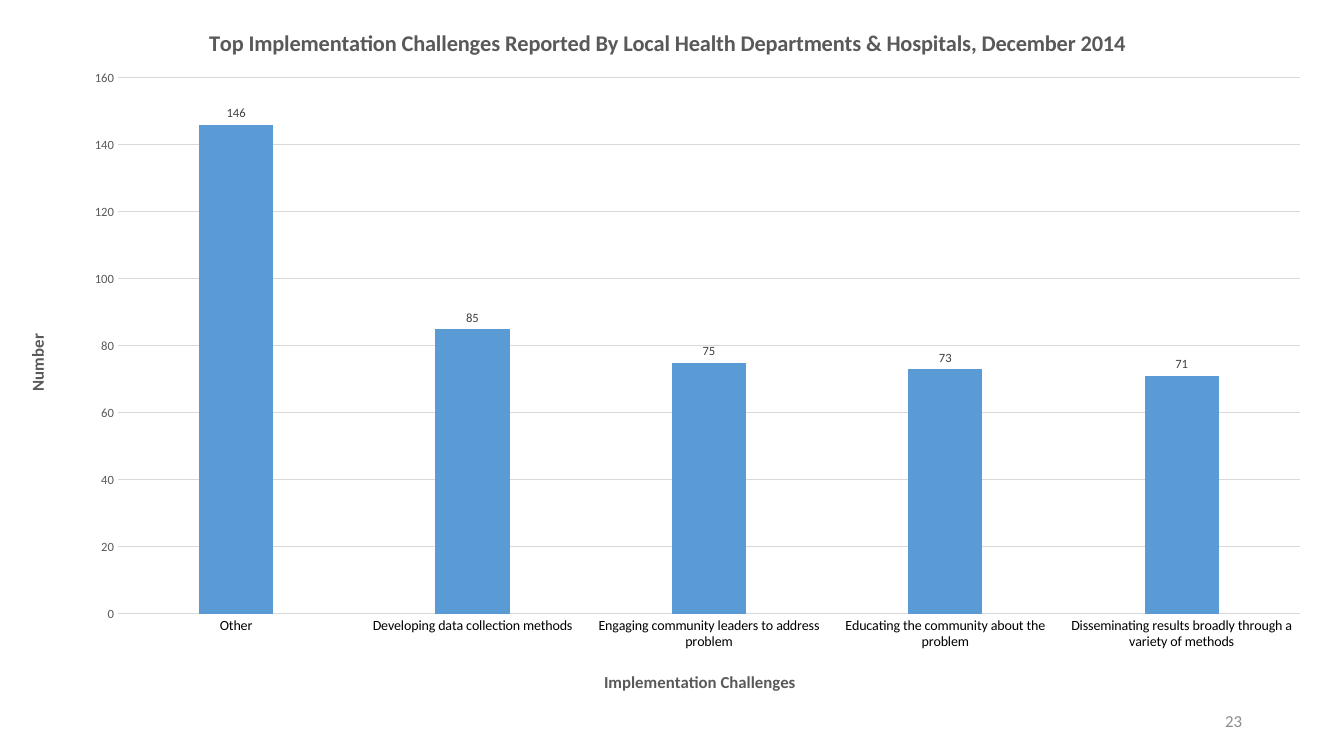
import pptx
import pptx.chart.data
import pptx.dml.color
import pptx.enum.chart
import pptx.enum.text
import pptx.oxml
import pptx.oxml.ns
import pptx.util

PX = 9071.43  # EMU per px, at 100.8 px to the inch
CHART_WIDTH, CHART_HEIGHT = 1327, 711
GREY, GRID = "595959", "D9D9D9"
qn = pptx.oxml.ns.qn


def style(font, size, color, bold=False):
    values = {"name": "Calibri", "size": pptx.util.Pt(size), "bold": bold}
    for key, value in values.items():
        setattr(font, key, value)
    font.color.rgb = pptx.dml.color.RGBColor.from_string(color)


def place(element, index, fractions, inner=False):
    """Give a chart part a manual layout, in fractions of the chart."""
    old = element.find(qn("c:layout"))
    if old is not None:
        element.remove(old)
    layout = pptx.oxml.parse_xml(f"<c:layout {pptx.oxml.ns.nsdecls('c')}><c:manualLayout/></c:layout>")
    settings = [("layoutTarget", "inner")] if inner else []
    settings += [("xMode", "edge"), ("yMode", "edge")]
    settings += zip("xywh", (f"{fraction:.4f}" for fraction in fractions))
    for name, value in settings:
        layout[0].append(layout.makeelement(qn("c:" + name), {"val": value}))
    element.insert(index, layout)


# Slide
deck = pptx.Presentation()
deck.slide_width, deck.slide_height = round(1344 * PX), round(756 * PX)
page = deck.slides.add_slide(deck.slide_layouts[6])

# Slide number
box = page.shapes.add_textbox(*(round(length * PX) for length in (950, 701, 302, 40)))
frame = box.text_frame
frame.word_wrap = True
frame.vertical_anchor = pptx.enum.text.MSO_ANCHOR.MIDDLE
para = frame.paragraphs[0]
para.alignment = pptx.enum.text.PP_ALIGN.RIGHT
span = para.add_run()
span.text = "23"
style(span.font, 12, "8C8C8C")

# Chart
challenges = {
    "Other": 146,
    "Developing data collection methods": 85,
    "Engaging community leaders to address problem": 75,
    "Educating the community about the problem": 73,
    "Disseminating results broadly through a variety of methods": 71,
}
data = pptx.chart.data.CategoryChartData(number_format="0")
data.categories = list(challenges)
data.add_series("Series 1", list(challenges.values()))
chart = page.shapes.add_chart(
    pptx.enum.chart.XL_CHART_TYPE.COLUMN_CLUSTERED, 0, 0,
    round(CHART_WIDTH * PX), round(CHART_HEIGHT * PX), data).chart
chart.has_legend = False
style(chart.font, 10, "000000")
plot_area = chart.plots[0]._element.getparent()
place(plot_area, 0, (118 / CHART_WIDTH, 78 / CHART_HEIGHT,
                     1182 / CHART_WIDTH, 536 / CHART_HEIGHT), inner=True)

# Columns and their labels
plot = chart.plots[0]
for key, value in {"gap_width": 219, "overlap": -27, "vary_by_categories": False,
                   "has_data_labels": True}.items():
    setattr(plot, key, value)
column_fill = plot.series[0].format.fill
column_fill.solid()
column_fill.fore_color.rgb = pptx.dml.color.RGBColor.from_string("5B9BD5")
plot.data_labels.show_value = True
plot.data_labels.position = pptx.enum.chart.XL_LABEL_POSITION.OUTSIDE_END
style(plot.data_labels.font, 9, "404040")

# Axes
categories, values = chart.category_axis, chart.value_axis
for axis, size, color in ((categories, 10, "000000"), (values, 9, GREY)):
    axis.major_tick_mark = axis.minor_tick_mark = pptx.enum.chart.XL_TICK_MARK.NONE
    style(axis.tick_labels.font, size, color)
values.minimum_scale, values.maximum_scale, values.major_unit = 0, 160, 20
values.tick_labels.number_format = "0"
values.tick_labels.number_format_is_linked = False
values.format.line.fill.background()
for line in (categories.format.line, values.major_gridlines.format.line):
    line.width = pptx.util.Pt(0.75)
    line.color.rgb = pptx.dml.color.RGBColor.from_string(GRID)

# Titles: owner, wording, size, left and top in px
titles = (
    (chart, "Top Implementation Challenges Reported By Local Health Departments & Hospitals, "
            "December 2014", 16, 205, 24),
    (categories, "Implementation Challenges", 12, 601, 668),
    (values, "Number", 12, 23, 331),
)
for owner, wording, size, left, top in titles:
    title = owner.chart_title if owner is chart else owner.axis_title
    para = title.text_frame.paragraphs[0]
    span = para.add_run()
    span.text = wording
    style(span.font, size, GREY, bold=True)
    place(title._element, 1, (left / CHART_WIDTH, top / CHART_HEIGHT))
    if owner is values:
        body = title._element.find(".//" + qn("a:bodyPr"))
        body.set("rot", "-5400000")
        body.set("vert", "horz")

deck.save("out.pptx")
